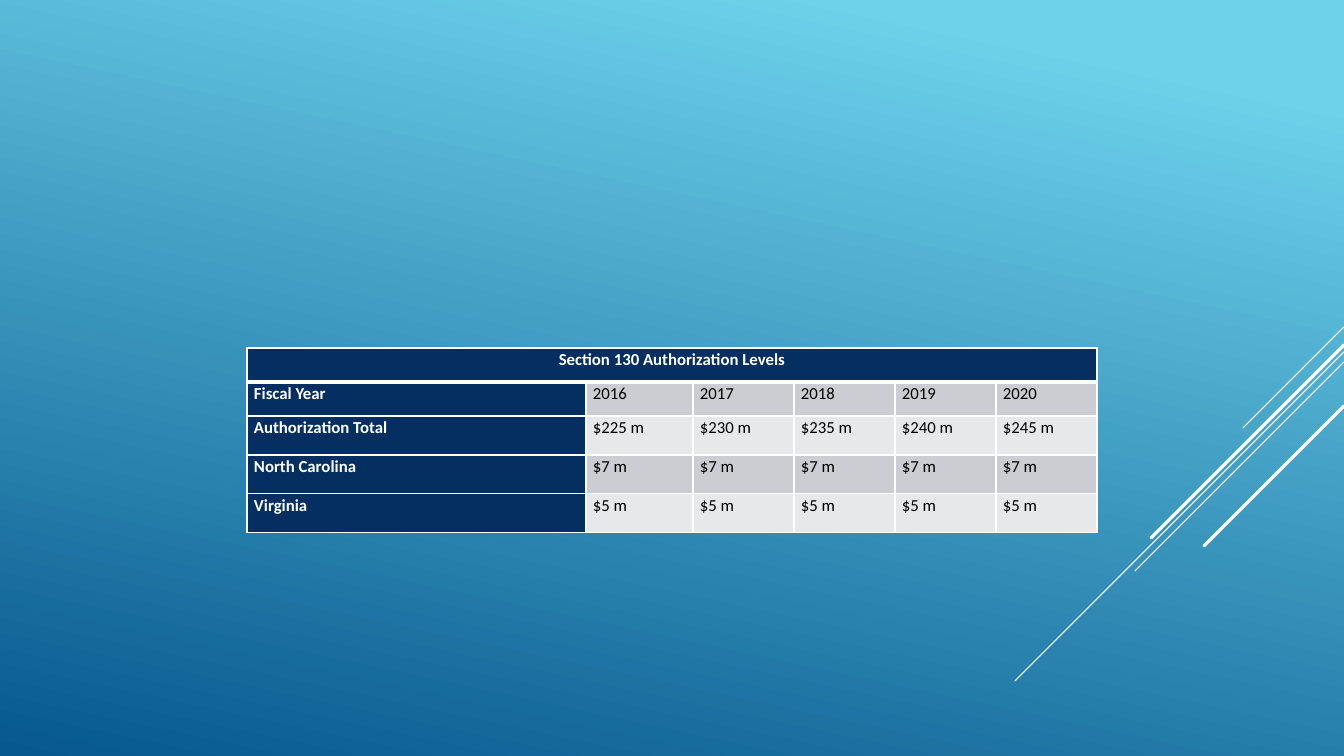
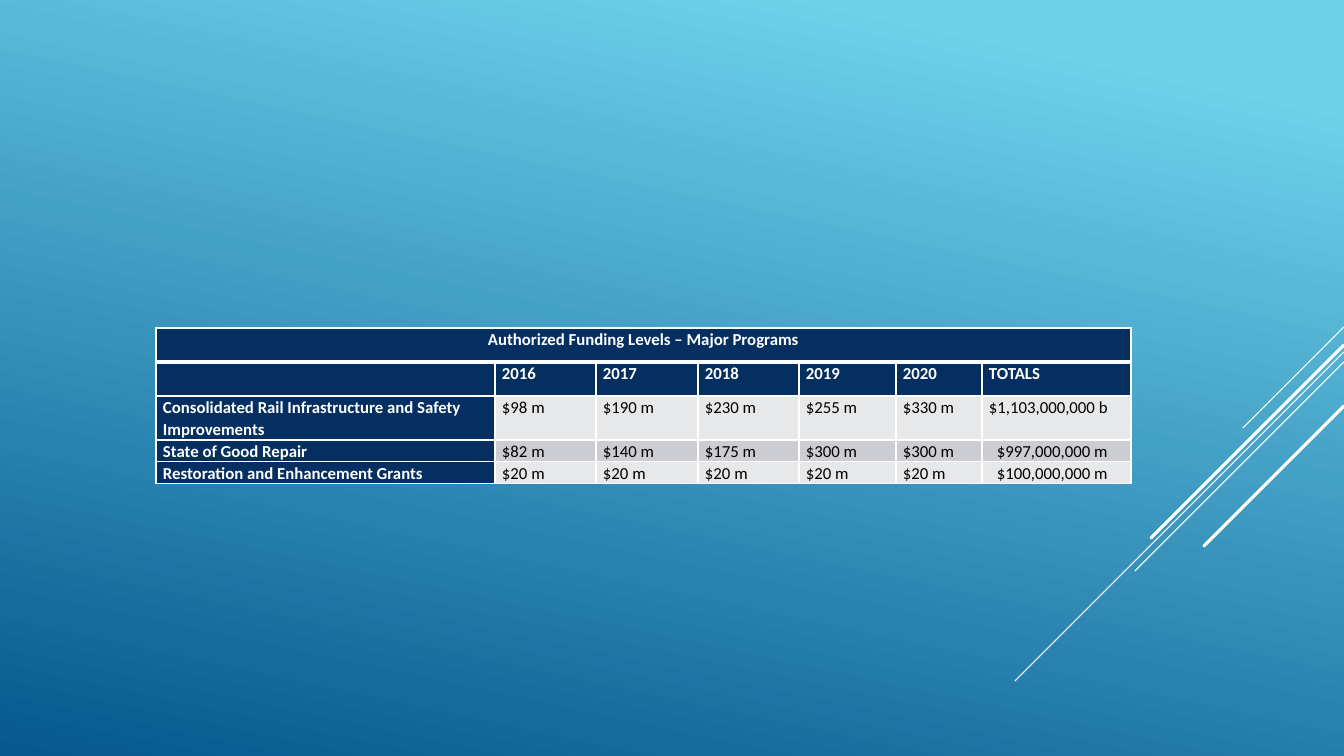
from lxml import etree
from pptx import Presentation
from pptx import util as u
from pptx.dml import color
from pptx.enum import shapes, text
from pptx.oxml import ns

WIDTH, HEIGHT = 1344, 756
EMU_PER_PX = 12192000 / WIDTH


def px(length):
    return u.Emu(round(length * EMU_PER_PX))


def rgb(value):
    return color.RGBColor.from_string(value)


class Deck:
    FONT = "Calibri"
    FONT_SIZE = 12
    LINE_SPACING = 1.07
    WHITE = "FFFFFF"
    BLACK = "000000"
    NAVY = "052F61"
    BANDS = ("E7E8EA", "CCCDD2")
    GRADIENT = ((0.1, "6ED2EB"), (1, "06588E"))
    GRADIENT_ANGLE = 258
    BORDER, HEADER_BORDER = 1, 3
    CELL_INSET = 7
    DIAGONALS = (
        (327, 101, 0.75),
        (352, 329, 0.75),
        (362, 209, 0.75),
        (345, 193, 2.25),
        (406, 140, 2.25),
    )

    def __init__(self):
        self.presentation = Presentation()
        self.presentation.slide_width = px(WIDTH)
        self.presentation.slide_height = px(HEIGHT)
        self.slide = None
        self.paint_background()

    def paint_background(self):
        fill = self.presentation.slide_master.background.fill
        fill.gradient()
        fill.gradient_angle = self.GRADIENT_ANGLE
        for stop, (position, value) in zip(fill.gradient_stops, self.GRADIENT):
            stop.position = position
            stop.color.rgb = rgb(value)

    def add_slide(self):
        blank_layout = self.presentation.slide_layouts[6]
        self.slide = self.presentation.slides.add_slide(blank_layout)
        for top, length, weight in self.DIAGONALS:
            self.add_diagonal(top, length, weight)

    def add_diagonal(self, top, length, weight):
        connector = self.slide.shapes.add_connector(
            shapes.MSO_CONNECTOR.STRAIGHT,
            px(WIDTH), px(top), px(WIDTH - length), px(top + length),
        )
        connector.line.color.rgb = rgb(self.WHITE)
        connector.line.width = u.Pt(weight)
        properties = connector.element.spPr
        properties.find(ns.qn("a:ln")).set("cap", "rnd")
        etree.SubElement(properties, ns.qn("a:effectLst"))

    def add_table(self, left, top, widths, heights, title, rows, header_rows=1):
        table = self.slide.shapes.add_table(
            len(heights), len(widths), px(left), px(top), px(sum(widths)), px(sum(heights))
        ).table
        for column, width in zip(table.columns, widths):
            column.width = px(width)
        for row, height in zip(table.rows, heights):
            row.height = px(height)
        table.cell(0, 0).merge(table.cell(0, len(widths) - 1))
        title_row = [title] + [""] * (len(widths) - 1)
        for row_index, values in enumerate([title_row, *rows]):
            for column_index, value in enumerate(values):
                is_header = row_index < header_rows or column_index == 0
                cell = table.cell(row_index, column_index)
                self.draw_borders(cell, row_index)
                cell.fill.solid()
                cell.fill.fore_color.rgb = rgb(self.NAVY if is_header else self.BANDS[row_index % 2])
                self.write_cell(cell, value, is_header)
        table.cell(0, 0).text_frame.paragraphs[0].alignment = text.PP_ALIGN.CENTER
        return table

    def draw_borders(self, cell, row_index):
        weights = {
            "L": self.BORDER,
            "R": self.BORDER,
            "T": self.HEADER_BORDER if row_index == 1 else self.BORDER,
            "B": self.HEADER_BORDER if row_index == 0 else self.BORDER,
        }
        properties = cell._tc.get_or_add_tcPr()
        for side, weight in weights.items():
            border = etree.SubElement(properties, ns.qn(f"a:ln{side}"), w=str(u.Pt(weight)))
            fill = etree.SubElement(border, ns.qn("a:solidFill"))
            etree.SubElement(fill, ns.qn("a:srgbClr"), val=self.WHITE)

    def write_cell(self, cell, value, is_header):
        cell.margin_left = cell.margin_right = px(self.CELL_INSET)
        cell.margin_top = cell.margin_bottom = 0
        paragraph = cell.text_frame.paragraphs[0]
        paragraph.text = value
        paragraph.line_spacing = self.LINE_SPACING
        for run in paragraph.runs:
            run.font.name = self.FONT
            run.font.size = u.Pt(self.FONT_SIZE)
            run.font.bold = is_header
            run.font.color.rgb = rgb(self.WHITE if is_header else self.BLACK)

    def save(self):
        self.presentation.save("out.pptx")


def main():
    deck = Deck()
    years = ["2016", "2017", "2018", "2019", "2020"]

    deck.add_slide()
    deck.add_table(
        247, 348, [339, 107, 101, 101, 101, 101], [34, 34, 39, 39, 39],
        "Section 130 Authorization Levels",
        [
            ["Fiscal Year", *years],
            ["Authorization Total", "$225 m", "$230 m", "$235 m", "$240 m", "$245 m"],
            ["North Carolina"] + ["$7 m"] * len(years),
            ["Virginia"] + ["$5 m"] * len(years),
        ],
    )

    deck.add_slide()
    programs = deck.add_table(
        156, 328, [339, 101, 102, 101, 97, 86, 149], [34, 34, 44, 22, 22],
        "Authorized Funding Levels – Major Programs",
        [
            ["", *years, "TOTALS"],
            ["Consolidated Rail Infrastructure and Safety Improvements",
             "$98 m", "$190 m", "$230 m", "$255 m", "$330 m", "$1,103,000,000 b"],
            ["State of Good Repair",
             "$82 m", "$140 m", "$175 m", "$300 m", "$300 m", "$997,000,000 m"],
            ["Restoration and Enhancement Grants"] + ["$20 m"] * len(years) + ["$100,000,000 m"],
        ],
        header_rows=2,
    )
    for row_index in (3, 4):
        programs.cell(row_index, 6).margin_left = px(15)

    deck.save()


if __name__ == "__main__":
    main()
